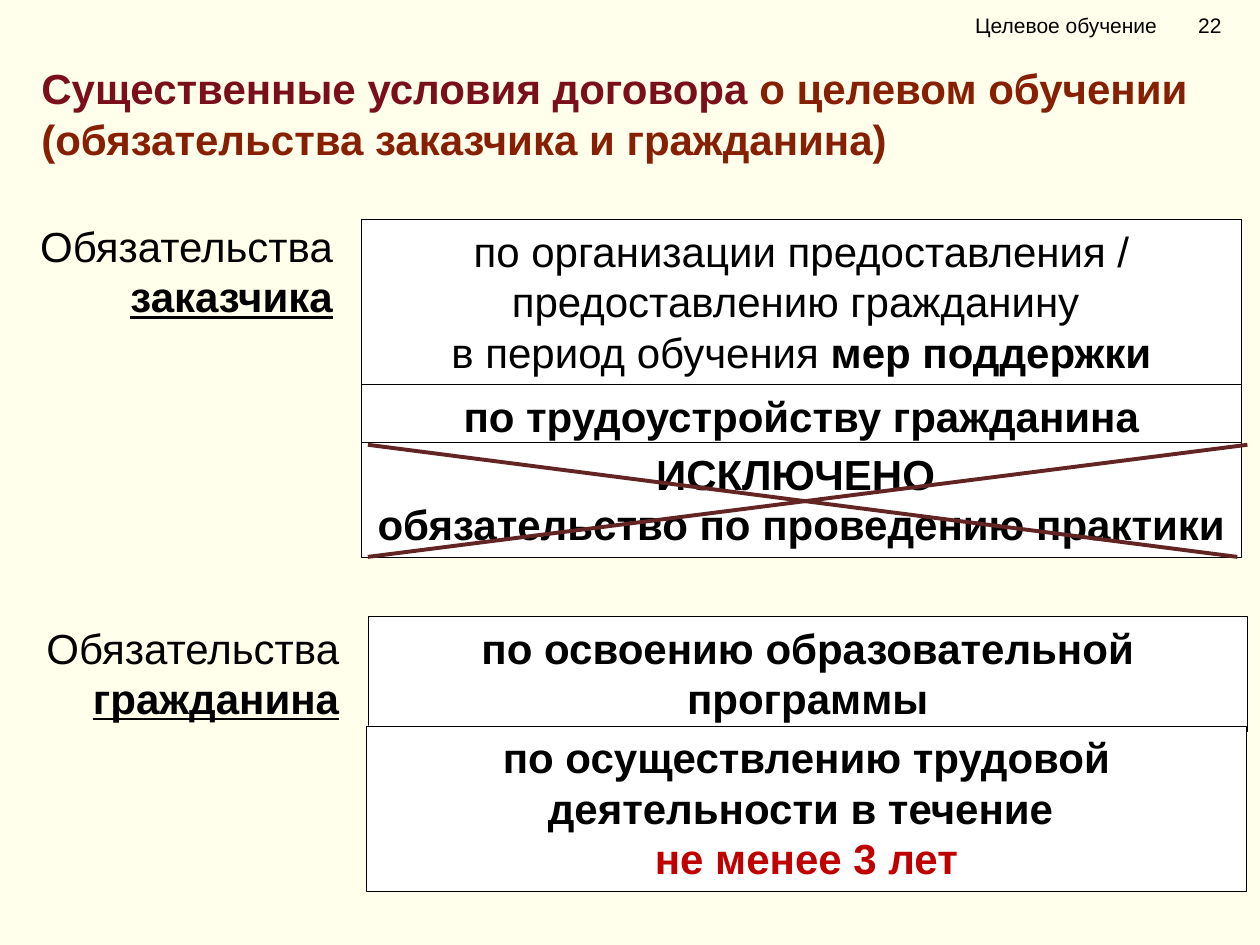
from collections import namedtuple

from lxml.etree import SubElement
from pptx import Presentation
from pptx.dml.color import RGBColor
from pptx.enum.shapes import MSO_CONNECTOR as Connector, MSO_SHAPE as Shape
from pptx.enum.text import MSO_ANCHOR as Anchor, PP_ALIGN as Align
from pptx.oxml.ns import qn
from pptx.util import Inches, Pt

COLUMNS, ROWS = 100, 75
WIDTH, HEIGHT = Inches(10), Inches(7.5)
BLACK, WHITE, CREAM = "000000", "FFFFFF", "FFFFEB"
MAROON, RUST, RED, CROSS = "7B0F19", "871F03", "C00000", "632523"

Box = namedtuple("Box", "column row columns rows")
Run = namedtuple("Run", "text bold color underline", defaults=(False, BLACK, False))


def rgb(value):
    """Turn a hex string into a colour."""
    return RGBColor.from_string(value)


def across(columns):
    """Convert grid columns to a length."""
    return round(WIDTH * columns / COLUMNS)


def down(rows):
    """Convert grid rows to a length."""
    return round(HEIGHT * rows / ROWS)


def place(box):
    """Convert a grid box to left, top, width and height."""
    return across(box.column), down(box.row), across(box.columns), down(box.rows)


def write(shape, paragraphs, align, size=24):
    """Fill a shape with paragraphs, each a list of runs."""
    frame = shape.text_frame
    frame.word_wrap = True
    for index, runs in enumerate(paragraphs):
        paragraph = frame.paragraphs[0] if index == 0 else frame.add_paragraph()
        paragraph.alignment = align
        for part in runs:
            run = paragraph.add_run()
            run.text = part.text
            font = run.font
            font.name, font.size = "Arial", Pt(size)
            font.bold, font.underline = part.bold, part.underline
            font.color.rgb = rgb(part.color)


def add_text(slide, box, paragraphs, align=Align.LEFT, size=24):
    """Add a text box and return it."""
    shape = slide.shapes.add_textbox(*place(box))
    write(shape, paragraphs, align, size)
    return shape


def add_header(slide, box):
    """Add the running title and the page number at a tab stop."""
    shape = add_text(slide, box, [[Run("Целевое обучение\t22")]], size=12)
    frame = shape.text_frame
    frame.vertical_anchor = Anchor.MIDDLE
    frame.margin_left = across(3)
    properties = frame.paragraphs[0]._p.get_or_add_pPr()
    tabs = SubElement(properties, qn("a:tabLst"))
    SubElement(tabs, qn("a:tab"), pos=str(across(17.7)), algn="l")


def add_title(slide, box):
    """Add the two-colour slide title."""
    add_text(slide, box, [[
        Run("Существенные условия договора ", True, MAROON),
        Run("о целевом обучении (обязательства заказчика и гражданина)", True, RUST),
    ]])


def add_party(slide, box, party):
    """Add the right-aligned label naming who is obliged."""
    runs = [Run("Обязательства "), Run(party, True, underline=True)]
    add_text(slide, box, [runs], Align.RIGHT)


def add_duty(slide, box, paragraphs):
    """Add one white outlined box with an obligation."""
    shape = slide.shapes.add_shape(Shape.RECTANGLE, *place(box))
    shape.shadow.inherit = False
    shape.fill.solid()
    shape.fill.fore_color.rgb = rgb(WHITE)
    shape.line.color.rgb = rgb(BLACK)
    shape.line.width = Pt(0.25)
    shape.text_frame.vertical_anchor = Anchor.TOP
    write(shape, paragraphs, Align.CENTER)


def add_cross(slide, box):
    """Strike out a box with two diagonals."""
    left, top, width, height = place(box)
    bottom = top + height
    falling_end = left + width - across(0.8)
    for start, end, right in ((top, bottom, falling_end), (bottom, top, left + width)):
        line = slide.shapes.add_connector(Connector.STRAIGHT, left, start, right, end)
        line.line.color.rgb = rgb(CROSS)
        line.line.width = Pt(2.25)
        SubElement(line._element.spPr, qn("a:effectLst"))


def add_customer(slide, box):
    """Add the customer's obligations, the last one struck out."""
    add_duty(slide, box._replace(rows=13.1), [
        [Run("по организации предоставления / предоставлению гражданину ")],
        [Run("в период обучения "), Run("мер поддержки", True)],
    ])
    add_duty(slide, box._replace(row=box.row + 13.1, rows=5),
             [[Run("по трудоустройству гражданина", True)]])
    excluded = box._replace(row=box.row + 17.7, rows=9.1)
    add_duty(slide, excluded, [
        [Run("ИСКЛЮЧЕНО ", True)],
        [Run("обязательство по проведению практики", True)],
    ])
    add_cross(slide, Box(box.column + 0.5, excluded.row + 0.2, box.columns, 8.9))


def add_citizen(slide, box):
    """Add the citizen's obligations."""
    add_duty(slide, box._replace(rows=9.1),
             [[Run("по освоению образовательной программы", True)]])
    add_duty(slide, Box(box.column - 0.1, box.row + 8.7, box.columns, 13.1), [
        [Run("по осуществлению трудовой деятельности в течение ", True)],
        [Run("не менее 3 лет", True, RED)],
    ])


def main():
    """Build and save the presentation."""
    presentation = Presentation()
    presentation.slide_width, presentation.slide_height = WIDTH, HEIGHT
    slide = presentation.slides.add_slide(presentation.slide_layouts[6])
    slide.background.fill.solid()
    slide.background.fill.fore_color.rgb = rgb(CREAM)
    add_title(slide, Box(2.3, 4.5, 96.2, 4.7))
    add_header(slide, Box(74.4, 0, 25.6, 4))
    add_party(slide, Box(0.2, 17, 27.2, 9.1), "заказчика")
    add_customer(slide, Box(28.7, 17.4, 69.8, 26.8))
    add_party(slide, Box(0.8, 48.9, 27.1, 9.1), "гражданина")
    add_citizen(slide, Box(29.2, 48.9, 69.8, 21.8))
    presentation.save("out.pptx")


if __name__ == "__main__":
    main()
